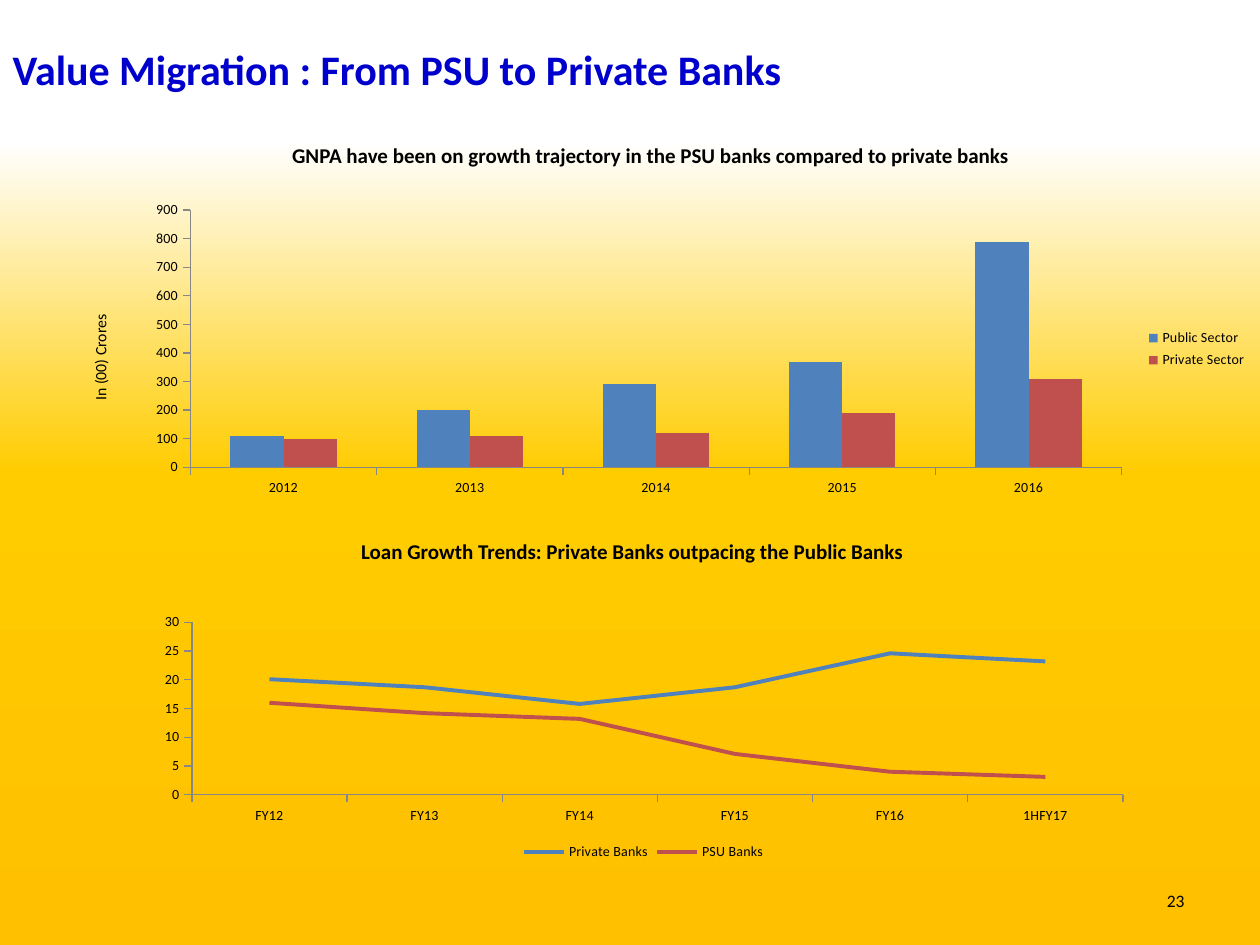
"""Build the slide on value migration from PSU to private banks."""
from lxml import etree
from pptx import Presentation
from pptx import util as u
from pptx.chart import data as chart_data
from pptx.dml import color
from pptx.enum import chart as charts, text
from pptx.oxml import ns

THEME = {
    "font": "Calibri",
    "title": "0000CC", "text": "000000", "axis": "878787",
    "series": ["4F81BD", "C0504D"],
    "background": [(0, "FFC000"), (50, "FFCC00"), (85, "FFFFFF")],
    "title_size": 24, "heading_size": 12, "number_size": 10,
    "label_size": 9, "chart_size": 8,
}


def set_all(target, values):
    for name, value in values.items():
        setattr(target, name, value)


def write(box, words, size, ink="text", bold=False, align=text.PP_ALIGN.LEFT,
          anchor=text.MSO_ANCHOR.TOP):
    set_all(box.text_frame, {"text": words, "word_wrap": True,
                             "vertical_anchor": anchor,
                             "auto_size": text.MSO_AUTO_SIZE.NONE})
    para = box.text_frame.paragraphs[0]
    para.alignment = align
    span = para.runs[0]
    set_all(span.font, {"name": THEME["font"], "size": u.Pt(THEME[size]), "bold": bold})
    span.font.color.rgb = color.RGBColor.from_string(THEME[ink])
    return para


deck = Presentation()
set_all(deck, {"slide_width": u.Cm(25.4), "slide_height": u.Cm(19.05)})
page = deck.slides.add_slide(deck.slide_layouts[5])

backdrop = page.background.fill
backdrop.gradient()
backdrop.gradient_angle = 90
stops = page.background._cSld.find(".//" + ns.qn("a:gsLst"))
for stop in list(stops):
    stops.remove(stop)
for position, shade in THEME["background"]:
    stop = etree.SubElement(stops, ns.qn("a:gs"), pos=str(position * 1000))
    etree.SubElement(stop, ns.qn("a:srgbClr"), val=shade)

title = page.shapes.title
set_all(title, {"left": u.Cm(0), "top": u.Cm(0.74),
                "width": u.Cm(18.06), "height": u.Cm(1.27)})
write(title, "Value Migration : From PSU to Private Banks", "title_size", "title", True)

headings = [
    ("GNPA have been on growth trajectory in the PSU banks compared to private banks",
     3.38, 2.74, 19.48),
    ("Loan Growth Trends: Private Banks outpacing the Public Banks", 3.86, 10.74, 17.78),
]
for words, left, top, width in headings:
    box = page.shapes.add_textbox(u.Cm(left), u.Cm(top), u.Cm(width), u.Cm(0.76))
    para = write(box, words, "heading_size", bold=True, align=text.PP_ALIGN.CENTER)
    indent = u.Cm(0.79)
    set_all(para._p.get_or_add_pPr(), {"marL": indent, "indent": -indent})

unit_label = page.shapes.add_textbox(u.Cm(1.7), u.Cm(5.13), u.Cm(0.89), u.Cm(3.2))
write(unit_label, "In (00) Crores", "label_size")
unit_label.text_frame._txBody.bodyPr.set("vert", "vert270")

page_number = page.shapes.add_textbox(u.Cm(18.21), u.Cm(17.65), u.Cm(5.92), u.Cm(1.02))
write(page_number, "23", "number_size", align=text.PP_ALIGN.RIGHT,
      anchor=text.MSO_ANCHOR.MIDDLE)

plots = [
    {"kind": charts.XL_CHART_TYPE.COLUMN_CLUSTERED, "area": (2.69, 3.94, 22.71, 6.2),
     "legend": charts.XL_LEGEND_POSITION.RIGHT, "top": 900, "step": 100,
     "categories": ["2012", "2013", "2014", "2015", "2016"],
     "series": {"Public Sector": [110, 200, 290, 370, 790],
                "Private Sector": [100, 110, 120, 190, 310]}},
    {"kind": charts.XL_CHART_TYPE.LINE, "area": (2.92, 12.27, 20.12, 5.18),
     "legend": charts.XL_LEGEND_POSITION.BOTTOM, "top": 30, "step": 5,
     "categories": ["FY12", "FY13", "FY14", "FY15", "FY16", "1HFY17"],
     "series": {"Private Banks": [20.1, 18.7, 15.8, 18.7, 24.6, 23.2],
                "PSU Banks": [16, 14.2, 13.2, 7.1, 4, 3.1]}},
]
for plot in plots:
    numbers = chart_data.CategoryChartData()
    numbers.categories = plot["categories"]
    for name, values in plot["series"].items():
        numbers.add_series(name, values)
    area = [u.Cm(length) for length in plot["area"]]
    chart = page.shapes.add_chart(plot["kind"], *area, numbers).chart
    set_all(chart, {"has_title": False, "has_legend": True})
    set_all(chart.font, {"name": THEME["font"], "size": u.Pt(THEME["chart_size"])})
    chart.font.color.rgb = color.RGBColor.from_string(THEME["text"])
    set_all(chart.legend, {"position": plot["legend"], "include_in_layout": False})
    for axis in (chart.category_axis, chart.value_axis):
        set_all(axis, {"has_major_gridlines": False,
                       "major_tick_mark": charts.XL_TICK_MARK.OUTSIDE,
                       "minor_tick_mark": charts.XL_TICK_MARK.NONE})
        axis.format.line.color.rgb = color.RGBColor.from_string(THEME["axis"])
    set_all(chart.value_axis, {"minimum_scale": 0, "maximum_scale": plot["top"],
                               "major_unit": plot["step"]})
    set_all(chart.value_axis.tick_labels, {"number_format": "0",
                                           "number_format_is_linked": False})
    chart.plots[0].vary_by_categories = False
    is_line = plot["kind"] == charts.XL_CHART_TYPE.LINE
    if not is_line:
        set_all(chart.plots[0], {"gap_width": 150, "overlap": 0})
    for series, shade in zip(chart.plots[0].series, THEME["series"]):
        ink = color.RGBColor.from_string(shade)
        if is_line:
            series.smooth = False
            series.marker.style = charts.XL_MARKER_STYLE.NONE
            series.format.line.width = u.Pt(2.25)
            series.format.line.color.rgb = ink
        else:
            series.format.fill.solid()
            series.format.fill.fore_color.rgb = ink

deck.save("out.pptx")
